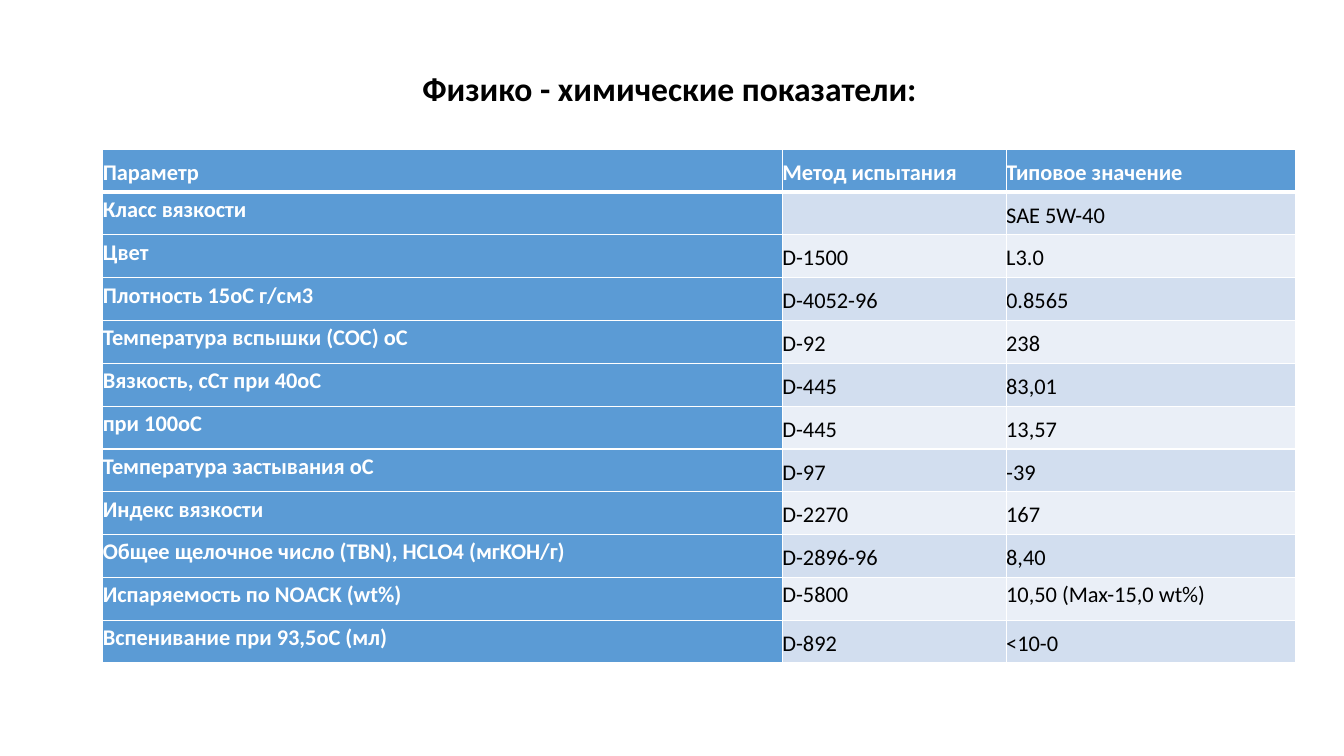
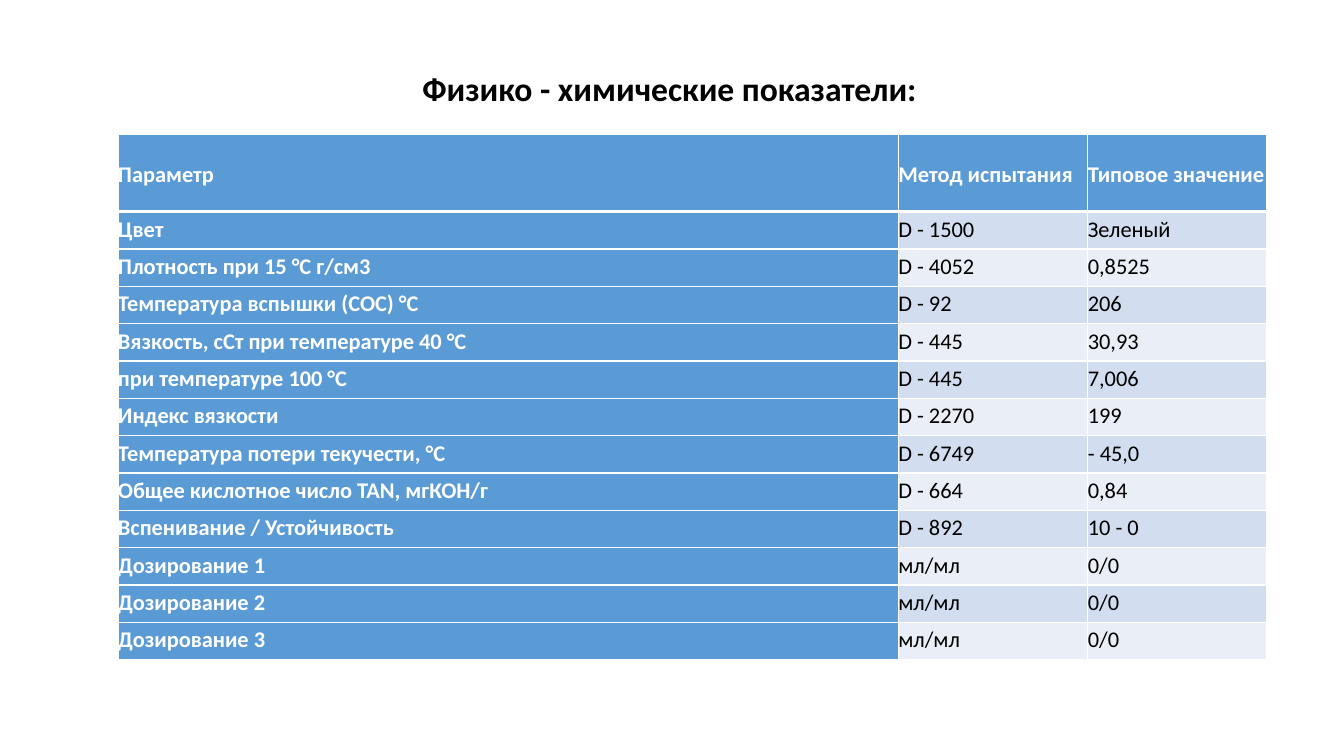
"""Build two slides with tables of physical and chemical oil properties."""
from lxml import etree
from pptx import Presentation
from pptx.dml.color import RGBColor
from pptx.enum.text import MSO_ANCHOR, MSO_AUTO_SIZE
from pptx.oxml.ns import qn
from pptx.util import Inches, Pt

TOP, MIDDLE = MSO_ANCHOR.TOP, MSO_ANCHOR.MIDDLE
GROW = MSO_AUTO_SIZE.SHAPE_TO_FIT_TEXT
WHITE, BLACK, BLUE = "FFFFFF", "000000", "5B9BD5"
BANDS = ("D2DEEF", "EAEFF7")
TITLE = "Физико - химические показатели:"
HEADER = ("Параметр", "Метод испытания", "Типовое значение")
ZERO_MARGINS = {f"margin_{side}": 0 for side in ("left", "right", "top", "bottom")}

TABLES = [
    {
        "place": (1.02, 1.48, 11.83, 5.1),
        "columns": (6.74, 2.22, 2.87),
        "header_height": 0.425,
        "anchor": MIDDLE,
        "top_rows": (10,),
        "rows": [
            ("Класс вязкости", "", "SAE 5W-40"),
            ("Цвет", "D-1500", "L3.0"),
            ("Плотность 15оС г/см3", "D-4052-96", "0.8565"),
            ("Температура вспышки (COC) оС", "D-92", "238"),
            ("Вязкость, сСт при 40оС", "D-445", "83,01"),
            ("при 100оС", "D-445", "13,57"),
            ("Температура застывания оС", "D-97", "-39"),
            ("Индекс вязкости", "D-2270", "167"),
            ("Общее щелочное число (TBN), HCLO4 (мгKOH/г)", "D-2896-96", "8,40"),
            ("Испаряемость по NOACK (wt%)", "D-5800", "10,50 (Max-15,0 wt%)"),
            ("Вспенивание при 93,5оС (мл)", "D-892", "<10-0"),
        ],
    },
    {
        "place": (1.17, 1.33, 11.4, 5.22),
        "columns": (7.74, 1.88, 1.77),
        "header_height": 0.77,
        "anchor": TOP,
        "top_rows": (),
        "rows": [
            ("Цвет", "D - 1500", "Зеленый"),
            ("Плотность при 15 °C г/см3", "D - 4052", "0,8525"),
            ("Температура вспышки (COC) °C", "D - 92", "206"),
            ("Вязкость, сСт при температуре 40 °C", "D - 445", "30,93"),
            ("при температуре 100 °C", "D - 445", "7,006"),
            ("Индекс вязкости", "D - 2270", "199"),
            ("Температура потери текучести, °C", "D - 6749", "- 45,0"),
            ("Общее кислотное число TAN, мгКОН/г", "D - 664", "0,84"),
            ("Вспенивание / Устойчивость", "D - 892", "10 - 0"),
            *((f"Дозирование {number}", "мл/мл", "0/0") for number in (1, 2, 3)),
        ],
    },
]


def add_span(para, text, size, color, bold):
    """Add a formatted run to a paragraph."""
    span = para.add_run()
    span.text = text
    for name, value in {"name": "Calibri", "size": Pt(size), "bold": bold}.items():
        setattr(span.font, name, value)
    span.font.color.rgb = RGBColor.from_string(color)


def add_borders(cell, top, bottom):
    """Give a cell white borders, with the top and bottom widths in points."""
    properties = cell._tc.get_or_add_tcPr()
    widths = {"lnL": 1, "lnR": 1, "lnT": top, "lnB": bottom}
    for position, (tag, width) in enumerate(widths.items()):
        line = etree.Element(qn(f"a:{tag}"), w=str(Pt(width)))
        fill = etree.SubElement(line, qn("a:solidFill"))
        etree.SubElement(fill, qn("a:srgbClr"), val=WHITE)
        properties.insert(position, line)


deck = Presentation()
deck.slide_width, deck.slide_height = Inches(13.33), Inches(7.5)

for data in TABLES:
    page = deck.slides.add_slide(deck.slide_layouts[6])
    box = page.shapes.add_textbox(Inches(4.09), Inches(0.62), Inches(5.15), Inches(0.5))
    box.text_frame.word_wrap = False
    box.text_frame.auto_size = GROW
    add_span(box.text_frame.paragraphs[0], TITLE, 24, BLACK, True)

    rows = [HEADER, *data["rows"]]
    place = [Inches(length) for length in data["place"]]
    table = page.shapes.add_table(len(rows), len(HEADER), *place).table
    for column, width in zip(table.columns, data["columns"]):
        column.width = Inches(width)
    body_height = (data["place"][3] - data["header_height"]) / len(data["rows"])

    for row, texts in enumerate(rows):
        table.rows[row].height = Inches(body_height if row else data["header_height"])
        for column, text in enumerate(texts):
            cell = table.cell(row, column)
            strong = row == 0 or column == 0
            at_top = row > 0 and (column == 0 or row in data["top_rows"])
            anchor = data["anchor"] if row else MIDDLE
            cell.vertical_anchor = TOP if at_top else anchor
            for name, value in ZERO_MARGINS.items():
                setattr(cell, name, value)
            cell.fill.solid()
            color = BLUE if strong else BANDS[(row - 1) % 2]
            cell.fill.fore_color.rgb = RGBColor.from_string(color)
            add_borders(cell, 3 if row == 1 else 1, 3 if row == 0 else 1)
            if text:
                para = cell.text_frame.paragraphs[0]
                para.line_spacing = 1.15
                para.space_after = Pt(10)
                add_span(para, text, 16, WHITE if strong else BLACK, strong)

deck.save("out.pptx")
